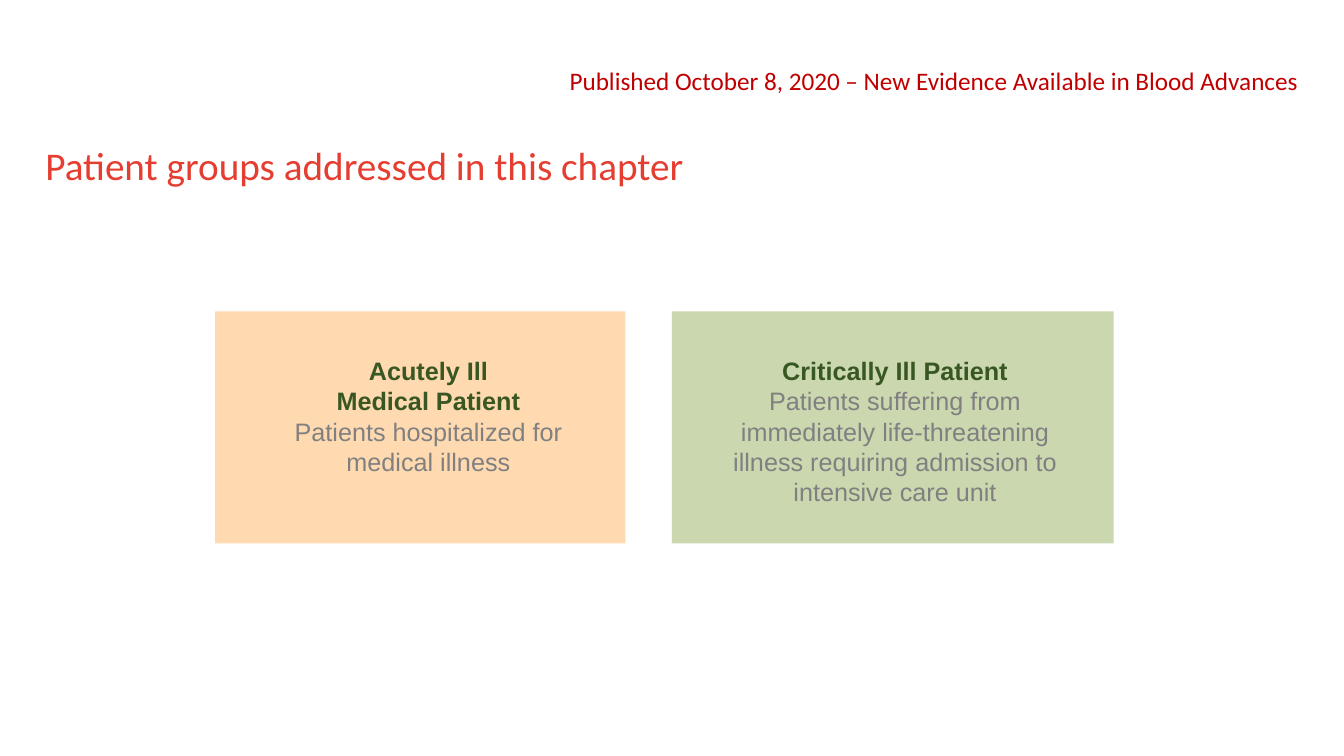
from pptx import Presentation
from pptx import util as u
from pptx.dml.color import RGBColor
from pptx.enum import shapes, text

WIDTH, HEIGHT = u.Inches(13.33), u.Inches(7.5)


def rgb(value):
    """Turn a hex string into a colour."""
    return RGBColor.from_string(value)


def area(left, top, width, height):
    """Turn percentages of the slide into a box."""
    return [int(share * size / 100) for share, size in
            zip((left, top, width, height), (WIDTH, HEIGHT, WIDTH, HEIGHT))]


def set_margins(tf, left=0, top=0, right=0):
    """Set the inner margins of a text frame."""
    tf.margin_left, tf.margin_top = int(left), int(top)
    tf.margin_right, tf.margin_bottom = int(right), 0


def style(p, name, size, color, bold=False):
    """Set the font of a paragraph."""
    p.font.name, p.font.size, p.font.bold = name, u.Pt(size), bold
    p.font.color.rgb = rgb(color)


def add_line(s, box, words, size, color):
    """Write one line of heading text in the box."""
    tf = s.shapes.add_textbox(*box).text_frame
    set_margins(tf)
    tf.word_wrap = False
    p = tf.paragraphs[0]
    p.text = words
    style(p, "Calibri", size, color)


def add_group_card(s, box, fill, sides, names, description):
    """Draw a patient group card with its name above its description."""
    sp = s.shapes.add_shape(shapes.MSO_SHAPE.RECTANGLE, *box)
    sp.shadow.inherit = False
    sp.fill.solid()
    sp.fill.fore_color.rgb = rgb(fill)
    sp.line.fill.background()
    tf = sp.text_frame
    tf.word_wrap = True
    tf.vertical_anchor = text.MSO_ANCHOR.TOP
    width, height = box[2:]
    set_margins(tf, sides[0] * width, 0.19 * height, sides[1] * width)
    lines = [*names, description]
    for i, line in enumerate(lines):
        p = tf.add_paragraph() if i else tf.paragraphs[0]
        p.text = line
        p.alignment = text.PP_ALIGN.CENTER
        p.line_spacing = u.Pt(21.6)
        is_name = i < len(names)
        style(p, "Arial", 18, "385723" if is_name else "808080", is_name)


def build_slide(prs):
    """Build the patient groups slide."""
    s = prs.slides.add_slide(prs.slide_layouts[6])
    add_line(s, area(42.38, 8.67, 54.54, 4.4),
             "Published October 8, 2020 – New Evidence Available in Blood Advances",
             18, "C00000")
    add_line(s, area(3.38, 18.67, 47.79, 6.53),
             "Patient groups addressed in this chapter", 28, "E53E31")
    add_group_card(s, area(16, 41.2, 30.53, 30.67), "FFD9B0", (0.18, 0.14),
                   ["Acutely Ill", "Medical Patient"],
                   "Patients hospitalized for medical illness")
    add_group_card(s, area(50, 41.2, 32.86, 30.67), "CAD7AF", (0.12, 0.11),
                   ["Critically Ill Patient"],
                   "Patients suffering from immediately life-threatening "
                   "illness requiring admission to intensive care unit")


def main():
    """Create the presentation and save it."""
    prs = Presentation()
    prs.slide_width, prs.slide_height = WIDTH, HEIGHT
    build_slide(prs)
    prs.save("out.pptx")


if __name__ == "__main__":
    main()
